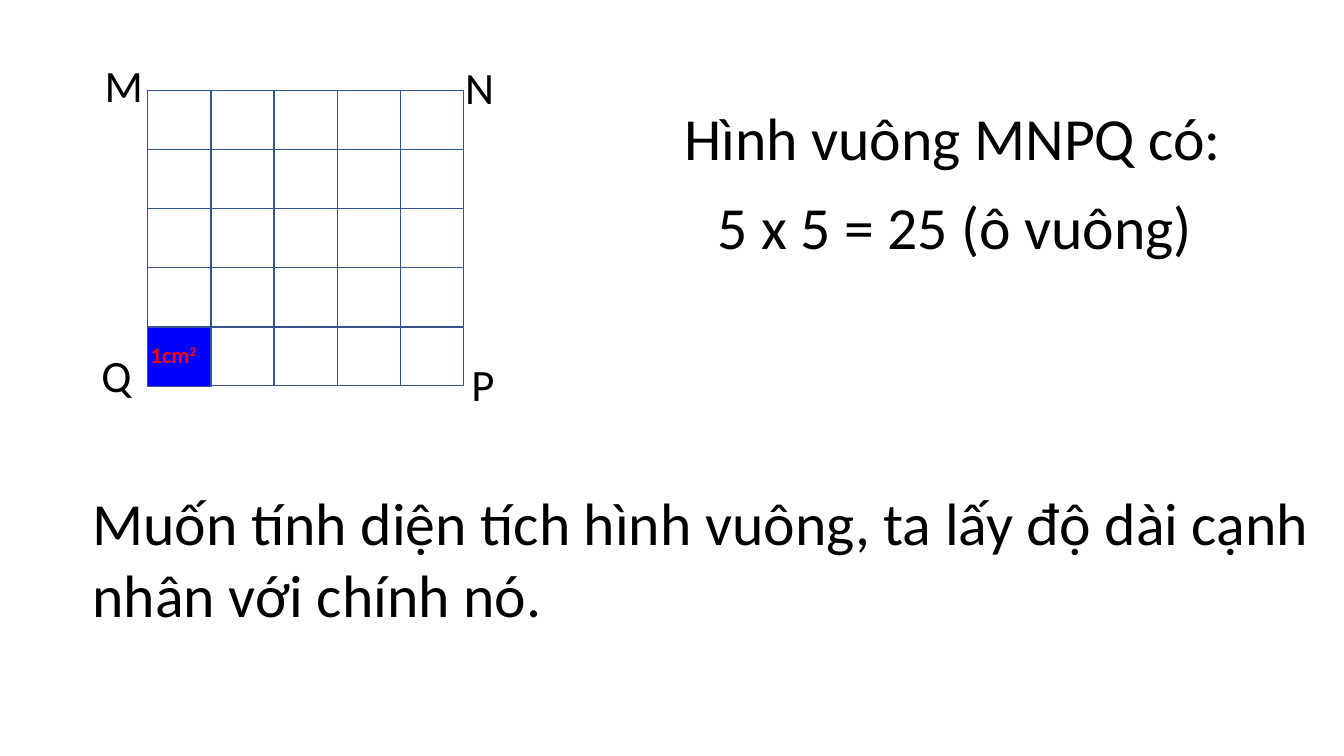
from pptx import Presentation
from pptx.dml.color import RGBColor
from pptx.enum.shapes import MSO_SHAPE
from pptx.enum.text import MSO_AUTO_SIZE, PP_ALIGN
from pptx.util import Pt

FONT = "Calibri"
SIDE = 5


def color(code):
    return RGBColor.from_string(code)


def add_text(slide, box, words, size, ink="000000", align=PP_ALIGN.LEFT, bold=False):
    frame = slide.shapes.add_textbox(*map(Pt, box)).text_frame
    frame.word_wrap = True
    frame.auto_size = MSO_AUTO_SIZE.SHAPE_TO_FIT_TEXT
    para = frame.paragraphs[0]
    para.text = words
    para.alignment = align
    font = para.font
    font.name, font.size, font.bold = FONT, Pt(size), bold
    font.color.rgb = color(ink)
    return para


def add_cell(slide, box, fill):
    cell = slide.shapes.add_shape(MSO_SHAPE.RECTANGLE, *map(Pt, box))
    cell.shadow.inherit = False
    cell.fill.solid()
    cell.fill.fore_color.rgb = color(fill)
    cell.line.color.rgb = color("325491")
    cell.line.width = Pt(1)


def draw_square(slide, left, top, width, height):
    # Grid of unit cells
    wide, high = width / SIDE, height / SIDE
    for row in range(SIDE):
        for col in range(SIDE):
            add_cell(slide, (left + col * wide, top + row * high, wide, high), "FFFFFF")

    # Corner names
    right, base = left + width, top + height
    corners = [
        ("M", left - 38, top - 27.4),
        ("N", right - 6, top - 26),
        ("P", right - 1.5, base - 24.3),
        ("Q", left - 40.3, base - 30.8),
    ]
    for name, x, y in corners:
        add_text(slide, (x, y, 31.7, 46), name, 32)

    # Unit cell with its area
    add_cell(slide, (left, base - high + 0.5, wide, high), "0000FF")
    unit = add_text(slide, (left - 5, base - high + 6.5, 55.4, 26.6),
                    "1cm", 16, "FF0000", bold=True)
    power = unit.add_run()
    power.text = "2"
    power.font._element.set("baseline", "30000")


def draw_count(slide, left, top, width, step):
    lines = ["Hình vuông MNPQ có:", "5 x 5 = 25 (ô vuông)"]
    for i, words in enumerate(lines):
        add_text(slide, (left + 1.4 * i, top + i * step, width, 59),
                 words, 42.7, align=PP_ALIGN.CENTER)


def draw_rule(slide, *box):
    add_text(slide, box,
             "Muốn tính diện tích hình vuông, ta lấy độ dài cạnh nhân với chính nó.", 42.7)


def main():
    deck = Presentation()
    deck.slide_width, deck.slide_height = Pt(960), Pt(540)
    slide = deck.slides.add_slide(deck.slide_layouts[6])
    draw_count(slide, 424.8, 68.4, 512, 63.4)
    draw_rule(slide, 59, 343.4, 901.4, 111)
    draw_square(slide, 105.6, 64.8, 225.6, 210.8)
    deck.save("out.pptx")


if __name__ == "__main__":
    main()
